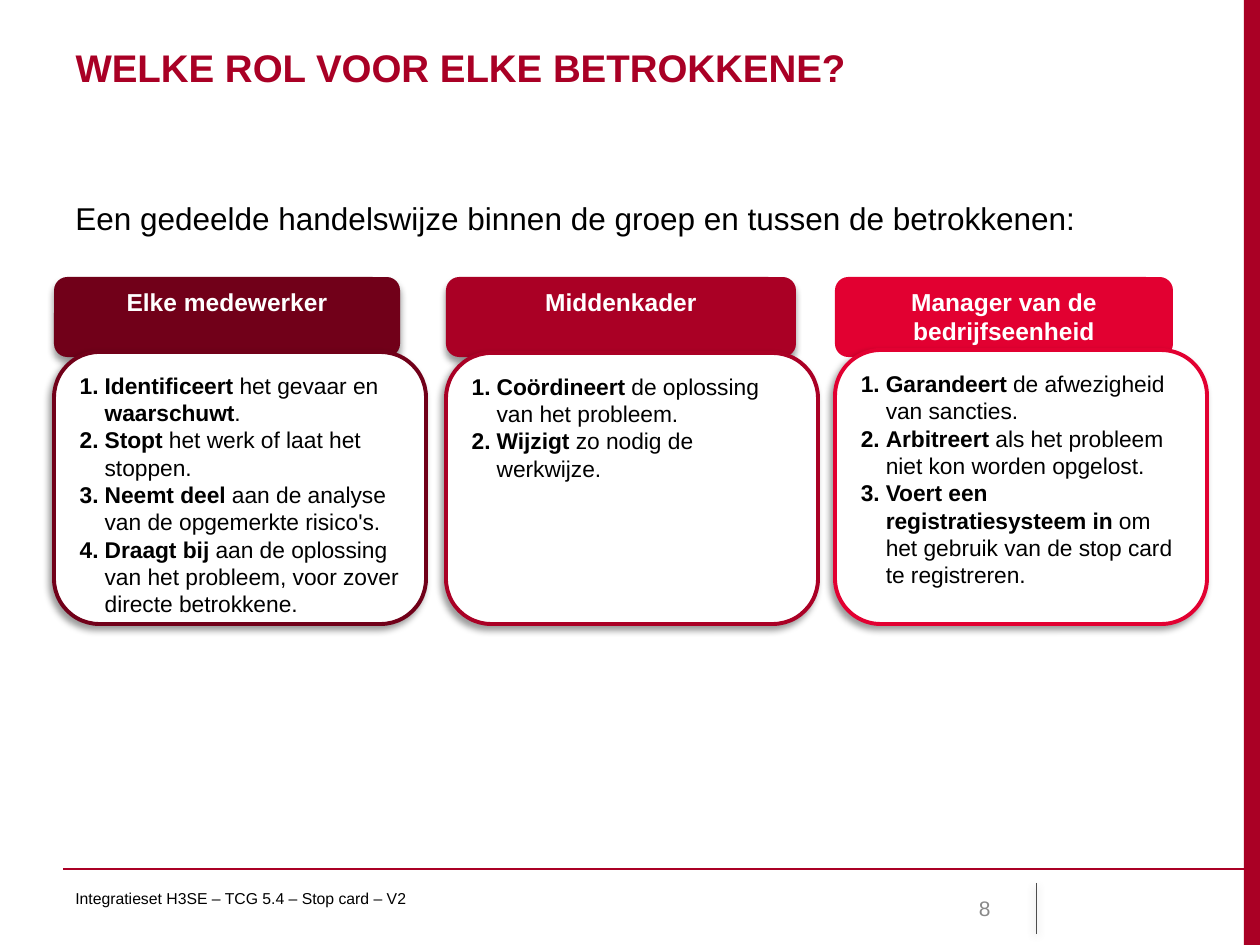
from lxml import etree
from pptx import Presentation
from pptx.dml.color import RGBColor
from pptx.enum.shapes import MSO_CONNECTOR as CONN, MSO_SHAPE as SHAPE
from pptx.enum.text import MSO_ANCHOR as ANCHOR, PP_ALIGN as ALIGN
from pptx.oxml.ns import qn
from pptx.util import Emu, Pt

SCALE = 914400 / 126
BLACK, WHITE, RED = "000000", "FFFFFF", "AA0025"

ROLES = [
    (54, 346, SHAPE.FLOWCHART_ALTERNATE_PROCESS, "710019", True, 352,
     "Elke medewerker", [
         [("Identificeert", True), (" het gevaar en ", False),
          ("waarschuwt", True), (".", False)],
         [("Stopt ", True), ("het werk of laat het stoppen.", False)],
         [("Neemt deel", True),
          (" aan de analyse van de opgemerkte risico's.", False)],
         [("Draagt bij ", True),
          ("aan de oplossing van het probleem, voor zover directe betrokkene.",
           False)],
     ]),
    (446, 350, SHAPE.ROUNDED_RECTANGLE, RED, True, 353, "Middenkader", [
        [("Coördineert", True), (" de oplossing van het probleem.", False)],
        [("Wijzigt", True), (" zo nodig de werkwijze.", False)],
    ]),
    (835, 338, SHAPE.ROUNDED_RECTANGLE, "E20031", False, 350,
     "Manager van de bedrijfseenheid", [
         [("Garandeert", True), (" de afwezigheid van sancties.", False)],
         [("Arbitreert", True),
          (" als het probleem niet kon worden opgelost.", False)],
         [("Voert een registratiesysteem in", True),
          (" om het gebruik van de stop card te registreren.", False)],
     ]),
]


def px(n):
    return Emu(round(n * SCALE))


def rgb(value):
    return RGBColor.from_string(value)


def add_run(p, text, size, color=BLACK, bold=False):
    r = p.add_run()
    r.text = text
    r.font.name = "Arial"
    r.font.size = Pt(size)
    r.font.bold = bold
    r.font.color.rgb = rgb(color)


def set_text(sp, text, size, color=BLACK, bold=False, align=ALIGN.LEFT,
             anchor=ANCHOR.TOP, wrap=True):
    tf = sp.text_frame
    tf.word_wrap = wrap
    tf.vertical_anchor = anchor
    tf.paragraphs[0].alignment = align
    add_run(tf.paragraphs[0], text, size, color, bold)


def add_text(slide, box, text, size, **fmt):
    sp = slide.shapes.add_textbox(*map(px, box))
    set_text(sp, text, size, **fmt)


def add_shadow(sp, angle, blur=4, dist=3, alpha=40):
    effects = sp._element.spPr.find(qn("a:effectLst"))
    shadow = etree.SubElement(
        effects, qn("a:outerShdw"), blurRad=str(Pt(blur)),
        dist=str(Pt(dist)), dir=str(angle * 60000), rotWithShape="0")
    clr = etree.SubElement(shadow, qn("a:srgbClr"), val=BLACK)
    etree.SubElement(clr, qn("a:alpha"), val=str(alpha * 1000))


def add_box(slide, kind, box, fill, line=None):
    sp = slide.shapes.add_shape(kind, *map(px, box))
    sp.shadow.inherit = False
    sp.fill.solid()
    sp.fill.fore_color.rgb = rgb(fill)
    if line:
        sp.line.color.rgb = rgb(line)
        sp.line.width = Pt(2.25)
    else:
        sp.line.fill.background()
    return sp


def add_line(slide, ends, color, width):
    line = slide.shapes.add_connector(CONN.STRAIGHT, *map(px, ends))
    line.line.color.rgb = rgb(color)
    line.line.width = Pt(width)
    etree.SubElement(line._element.spPr, qn("a:effectLst"))
    return line


def add_numbered(sp, items):
    tf = sp.text_frame
    tf.word_wrap = True
    tf.vertical_anchor = ANCHOR.TOP
    for i, item in enumerate(items):
        p = tf.paragraphs[0] if i == 0 else tf.add_paragraph()
        p.alignment = ALIGN.LEFT
        pPr = p._p.get_or_add_pPr()
        pPr.set("marL", str(px(25)))
        pPr.set("indent", str(px(-25)))
        etree.SubElement(pPr, qn("a:buFont"), typeface="+mj-lt")
        etree.SubElement(pPr, qn("a:buAutoNum"), type="arabicPeriod")
        for text, bold in item:
            add_run(p, text, 13, bold=bold)


def add_role(slide, x, width, kind, color, shaded, top, heading, items):
    header = add_box(slide, kind, (x, 277, width, 80), color)
    set_text(header, heading, 14, color=WHITE, bold=True, align=ALIGN.CENTER)
    if shaded:
        add_shadow(header, 90)
    card = add_box(slide, SHAPE.ROUNDED_RECTANGLE,
                   (x, top, 372, 624 - top), WHITE, color)
    add_shadow(card, 135)
    add_numbered(card, items)


def add_title(slide, text):
    title = slide.shapes.title
    title.left, title.top, title.width, title.height = map(
        px, (63, 38, 1133, 87))
    set_text(title, text, 22, color="A90025", bold=True)


def main():
    prs = Presentation()
    prs.slide_width, prs.slide_height = px(1260), px(945)
    slide = prs.slides.add_slide(prs.slide_layouts[5])

    add_box(slide, SHAPE.RECTANGLE, (1244, 0, 16, 945), RED)
    add_line(slide, (63, 869, 1260, 869), RED, 0.75)
    divider = add_line(slide, (1036, 883, 1036, 934), "4D4D4D", 0.5)
    add_shadow(divider, 90, blur=5, dist=1.6, alpha=38)

    add_title(slide, "WELKE ROL VOOR ELKE BETROKKENE?")
    add_text(slide, (63, 193, 1145, 50),
             "Een gedeelde handelswijze binnen de groep en tussen de betrokkenen:",
             18, wrap=False)
    for role in ROLES:
        add_role(slide, *role)
    add_text(slide, (63, 883, 766, 50),
             "Integratieset H3SE – TCG 5.4 – Stop card – V2", 9)
    add_text(slide, (903, 883, 100, 50), "8", 12, color="898989",
             align=ALIGN.RIGHT, anchor=ANCHOR.MIDDLE)
    prs.save("out.pptx")


if __name__ == "__main__":
    main()
